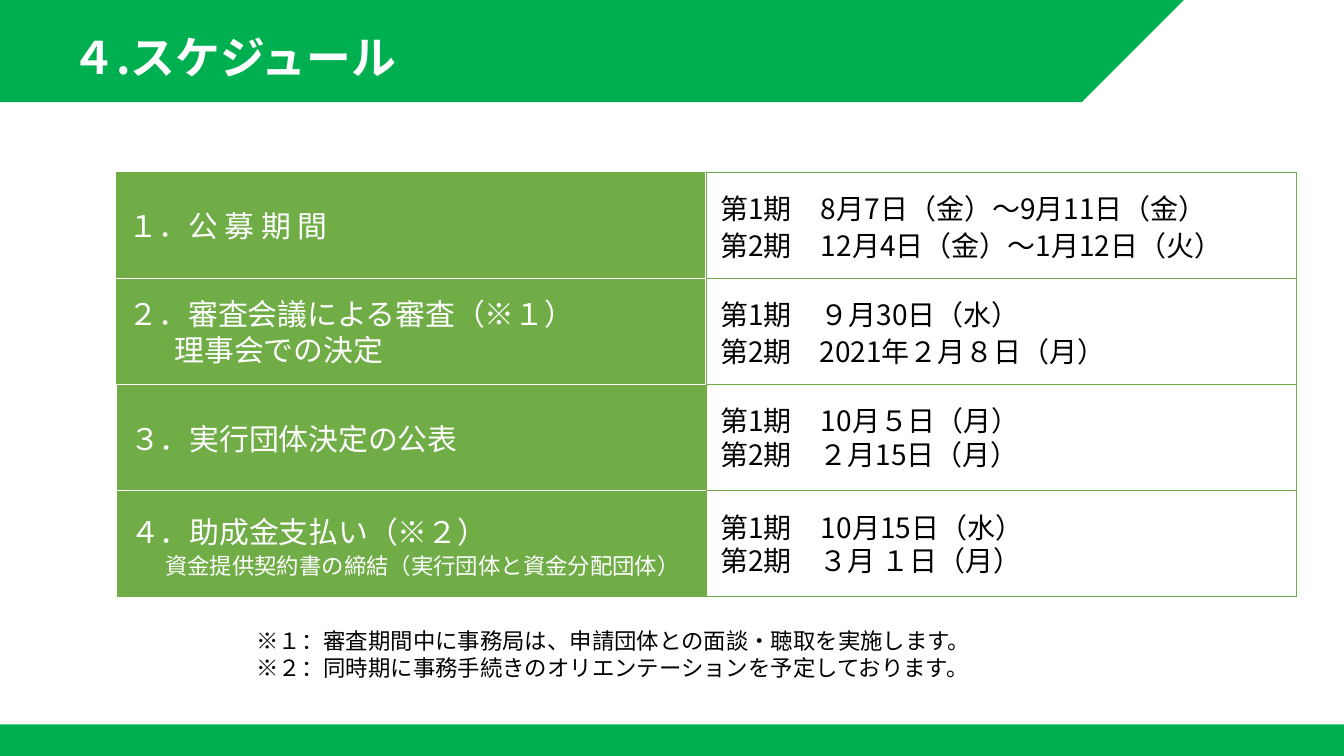
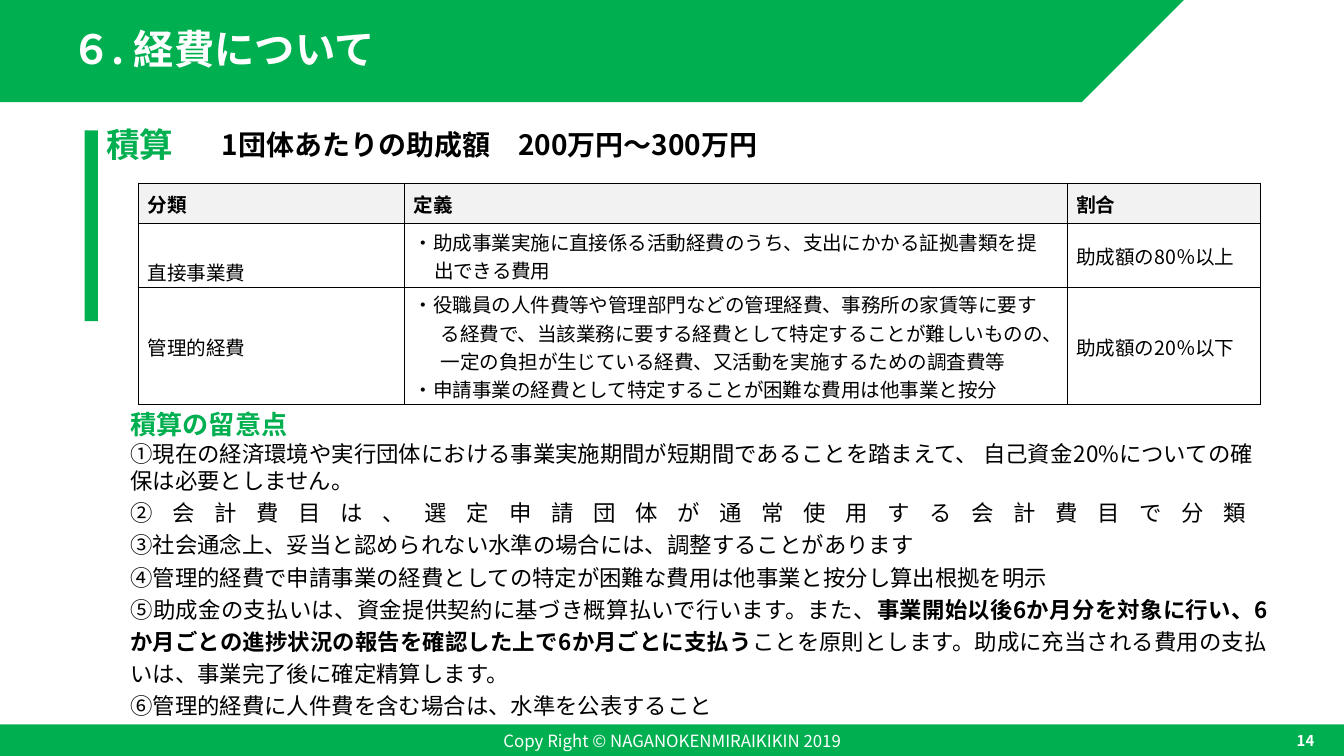
from dataclasses import dataclass
from lxml.etree import SubElement
from pptx import Presentation
from pptx.dml.color import RGBColor
from pptx.enum.shapes import MSO_SHAPE as SHAPE
from pptx.enum.text import MSO_ANCHOR as ANCHOR, MSO_AUTO_SIZE as AUTO, PP_ALIGN as ALIGN
from pptx.oxml.ns import qn
from pptx.util import Inches, Pt

FONT = "Noto Sans CJK JP"
COLORS = {"band": "00B050", "step": "70AD47", "white": "FFFFFF",
          "black": "000000", "header": "F2F2F2"}
TIGHT = (0.07, 0.04, 0.07, 0.04)
LOOSE = (0.1, 0.05, 0.1, 0.05)


@dataclass
class Para:
    """A paragraph; text between asterisks is bold."""
    text: str
    size: float = 12
    color: str = "black"
    bold: bool = False
    align: ALIGN = ALIGN.LEFT
    spacing: object = 1.0
    left: float = 0
    first: float = 0


STEPS = [
    ([Para("１．公 募 期 間", 16, "white")],
     ["第1期\t8月7日（金）～9月11日（金）", "第2期\t12月4日（金）～1月12日（火）"], 1.1),
    ([Para("２．審査会議による審査（※１）", 16, "white"),
      Para("理事会での決定", 16, "white", left=0.34)],
     ["第1期\t９月30日（水）", "第2期\u30002021年２月８日（月）"], 1.1),
    ([Para("３．実行団体決定の公表", 16, "white")],
     ["第1期\t10月５日（月）", "第2期\u3000２月15日（月）"], 1.0),
    ([Para("４．助成金支払い（※２）", 16, "white", spacing=1.1),
      Para("資金提供契約書の締結（実行団体と資金分配団体）", 12, "white", spacing=1.1, left=0.26)],
     ["第1期\t10月15日（水）", "第2期\u3000３月 １日（月）"], 1.0),
]

COSTS = [
    [[Para(t, 10.5, bold=True)] for t in ("分類", "定義", "割合")],
    [[Para("直接事業費", 10.5)],
     [Para("・助成事業実施に直接係る活動経費のうち、支出にかかる証拠書類を提", 10.5),
      Para("出できる費用", 10.5, left=0.15)],
     [Para("助成額の80％以上", 10.5)]],
    [[Para("管理的経費", 10.5)],
     [Para("・役職員の人件費等や管理部門などの管理経費、事務所の家賃等に要する経費で、"
           "当該業務に要する経費として特定することが難しいものの、"
           "一定の負担が生じている経費、又活動を実施するための調査費等",
           10.5, left=0.2, first=-0.2),
      Para("・申請事業の経費として特定することが困難な費用は他事業と按分", 10.5)],
     [Para("助成額の20％以下", 10.5)]],
]

RULES = [
    "②会計費目は、選定申請団体が通常使用する会計費目で分類\v"
    "③社会通念上、妥当と認められない水準の場合には、調整することがあります",
    "④管理的経費で申請事業の経費としての特定が困難な費用は他事業と按分し算出根拠を明示",
    "⑤助成金の支払いは、資金提供契約に基づき概算払いで行います。また、"
    "*事業開始以後6か月分を対象に行い、6か月ごとの進捗状況の報告を確認した上で6か月ごとに支払う*"
    "ことを原則とします。助成に充当される費用の支払いは、事業完了後に確定精算します。",
    "⑥管理的経費に人件費を含む場合は、水準を公表すること",
]


def rgb(name):
    """Return a palette colour."""
    return RGBColor.from_string(COLORS[name])


def add_run(p, text, para, bold):
    """Add one formatted run."""
    r = p.add_run()
    r.text = text
    f = r.font
    f.name, f.size, f.bold = FONT, Pt(para.size), bold
    f.color.rgb = rgb(para.color)
    SubElement(r._r.get_or_add_rPr(), qn("a:ea"), typeface=FONT)


def write(tf, paras):
    """Fill a text frame with formatted paragraphs."""
    for i, para in enumerate(paras):
        p = tf.paragraphs[0] if i == 0 else tf.add_paragraph()
        pPr = p._p.get_or_add_pPr()
        pPr.set("marL", str(Inches(para.left)))
        pPr.set("indent", str(Inches(para.first)))
        pPr.set("defTabSz", str(Inches(0.75)))
        SubElement(pPr, qn("a:buNone"))
        p.alignment, p.line_spacing = para.align, para.spacing
        p.space_before = Pt(0)
        for j, part in enumerate(para.text.split("*")):
            for k, line in enumerate(part.split("\v")):
                if k:
                    p.add_line_break()
                add_run(p, line, para, para.bold or j % 2 == 1)
        for br in p._p.findall(qn("a:br")):
            SubElement(br, qn("a:rPr"), sz=str(int(para.size * 100)))


def set_frame(tf, paras, insets, anchor):
    """Set up a text frame and write into it."""
    tf.word_wrap, tf.auto_size, tf.vertical_anchor = True, AUTO.NONE, anchor
    tf.margin_left, tf.margin_top, tf.margin_right, tf.margin_bottom = map(Inches, insets)
    write(tf, paras)


def add_text(s, box, paras, insets=TIGHT, anchor=ANCHOR.TOP):
    """Add a text box."""
    set_frame(s.shapes.add_textbox(*map(Inches, box)).text_frame, paras, insets, anchor)


def fill_placeholder(sp, box, paras, anchor):
    """Move a placeholder and fill it."""
    sp.left, sp.top, sp.width, sp.height = map(Inches, box)
    set_frame(sp.text_frame, paras, TIGHT, anchor)


def add_box(s, box, fill=None, line=None, shape=SHAPE.RECTANGLE):
    """Add a flat preset shape."""
    sp = s.shapes.add_shape(shape, *map(Inches, box))
    sp.shadow.inherit = False
    if fill:
        sp.fill.solid()
        sp.fill.fore_color.rgb = rgb(fill)
    else:
        sp.fill.background()
    if line:
        sp.line.color.rgb = rgb(line)
        sp.line.width = Pt(0.5)
    else:
        sp.line.fill.background()
    return sp


def add_bands(prs, s):
    """Draw the green bands and move them to the master."""
    corner = add_box(s, (8.05, 0, 0.76, 0.76), "band", shape=SHAPE.RIGHT_TRIANGLE)
    corner.rotation = 90
    top = add_box(s, (0, 0, 8.05, 0.76), "band")
    bottom = add_box(s, (0, 5.39, 10, 0.24), "band")
    for sp in (corner, top, bottom):
        prs.slide_master.shapes.element.insert(2, sp.element)


def add_title(s, text, top, size):
    """Fill the title placeholder."""
    fill_placeholder(s.shapes.title, (0.46, top, 8.62, 0.41),
                     [Para(text, size, "white", True, spacing=0.9)], ANCHOR.MIDDLE)


def add_step(s, i, label, dates, spacing):
    """Add one schedule row: green label and outlined dates."""
    top = 1.28 + 0.79 * i
    sp = add_box(s, (0.86 + 0.01 * (i // 2), top, 4.39, 0.8), "step", "white")
    set_frame(sp.text_frame, label, LOOSE, ANCHOR.MIDDLE)
    sp = add_box(s, (5.26, top, 4.39, 0.79), line="step")
    paras = [Para(d, 15, spacing=spacing) for d in dates]
    set_frame(sp.text_frame, paras, LOOSE, ANCHOR.MIDDLE)


def add_borders(cell):
    """Draw thin black borders around a cell."""
    tcPr = cell._tc.get_or_add_tcPr()
    for i, side in enumerate(("lnL", "lnR", "lnT", "lnB")):
        ln = tcPr.makeelement(qn("a:" + side), {"w": str(Pt(0.25))})
        fill = SubElement(ln, qn("a:solidFill"))
        SubElement(fill, qn("a:srgbClr"), val=COLORS["black"])
        tcPr.insert(i, ln)


def add_cost_table(s):
    """Add the table of cost categories."""
    widths, heights = (1.98, 4.93, 1.44), (0.3, 0.48, 0.87)
    box = (1.03, 1.36, sum(widths), sum(heights))
    table = s.shapes.add_table(3, 3, *map(Inches, box)).table
    for col, w in zip(table.columns, widths):
        col.width = Inches(w)
    for i, (row, h) in enumerate(zip(table.rows, heights)):
        row.height = Inches(h)
        for cell, paras in zip(row.cells, COSTS[i]):
            cell.margin_left, cell.margin_right = Inches(0.07), Inches(0.1)
            cell.margin_top, cell.margin_bottom = Inches(0.02), Inches(0.01)
            cell.vertical_anchor = ANCHOR.MIDDLE
            cell.fill.solid()
            cell.fill.fore_color.rgb = rgb("white" if i else "header")
            add_borders(cell)
            write(cell.text_frame, paras)
    table.cell(1, 0).vertical_anchor = ANCHOR.BOTTOM


def build_schedule(s):
    """Build the schedule slide."""
    add_title(s, "４.スケジュール", 0.24, 24)
    for i, step in enumerate(STEPS):
        add_step(s, i, *step)
    add_text(s, (1.81, 4.62, 5.59, 0.5),
             [Para("※１：審査期間中に事務局は、申請団体との面談・聴取を実施します。"),
              Para("※２：同時期に事務手続きのオリエンテーションを予定しております。")], LOOSE)


def build_costs(s):
    """Build the costs slide."""
    add_title(s, "６. 経費について", 0.18, 21.6)
    add_box(s, (0.63, 0.97, 0.1, 1.42), "band")
    add_text(s, (0.72, 0.88, 8.63, 0.38), [Para("積算", 18, "band", True)])
    add_text(s, (1.58, 0.93, 8.4, 0.31),
             [Para("1団体あたりの助成額\u3000200万円～300万円", 15, bold=True,
                   align=ALIGN.JUSTIFY, spacing=Pt(16.2))])
    add_cost_table(s)
    notes = [Para("積算の留意点", 14, "band", True, ALIGN.JUSTIFY, Pt(16.2)),
             Para("①現在の経済環境や実行団体における事業実施期間が短期間であることを踏まえて、 "
                  "自己資金20%についての確保は必要としません。")]
    notes += [Para(t, align=ALIGN.JUSTIFY, spacing=1.2) for t in RULES]
    fill_placeholder(s.placeholders[1], (0.9, 3.01, 8.6, 2.4), notes, ANCHOR.TOP)
    add_text(s, (3.31, 5.36, 3.38, 0.3),
             [Para("Copy Right © NAGANOKENMIRAIKIKIN 2019", 9, "white", align=ALIGN.CENTER)],
             anchor=ANCHOR.MIDDLE)
    add_text(s, (7.6, 5.36, 2.25, 0.3), [Para("14", 8, "white", True, ALIGN.RIGHT)],
             anchor=ANCHOR.MIDDLE)


def main():
    """Build and save the presentation."""
    prs = Presentation()
    prs.slide_width = Inches(10)
    prs.slide_height = prs.slide_width * 9 // 16
    schedule = prs.slides.add_slide(prs.slide_layouts[5])
    add_bands(prs, schedule)
    build_schedule(schedule)
    build_costs(prs.slides.add_slide(prs.slide_layouts[1]))
    prs.save("out.pptx")


if __name__ == "__main__":
    main()
